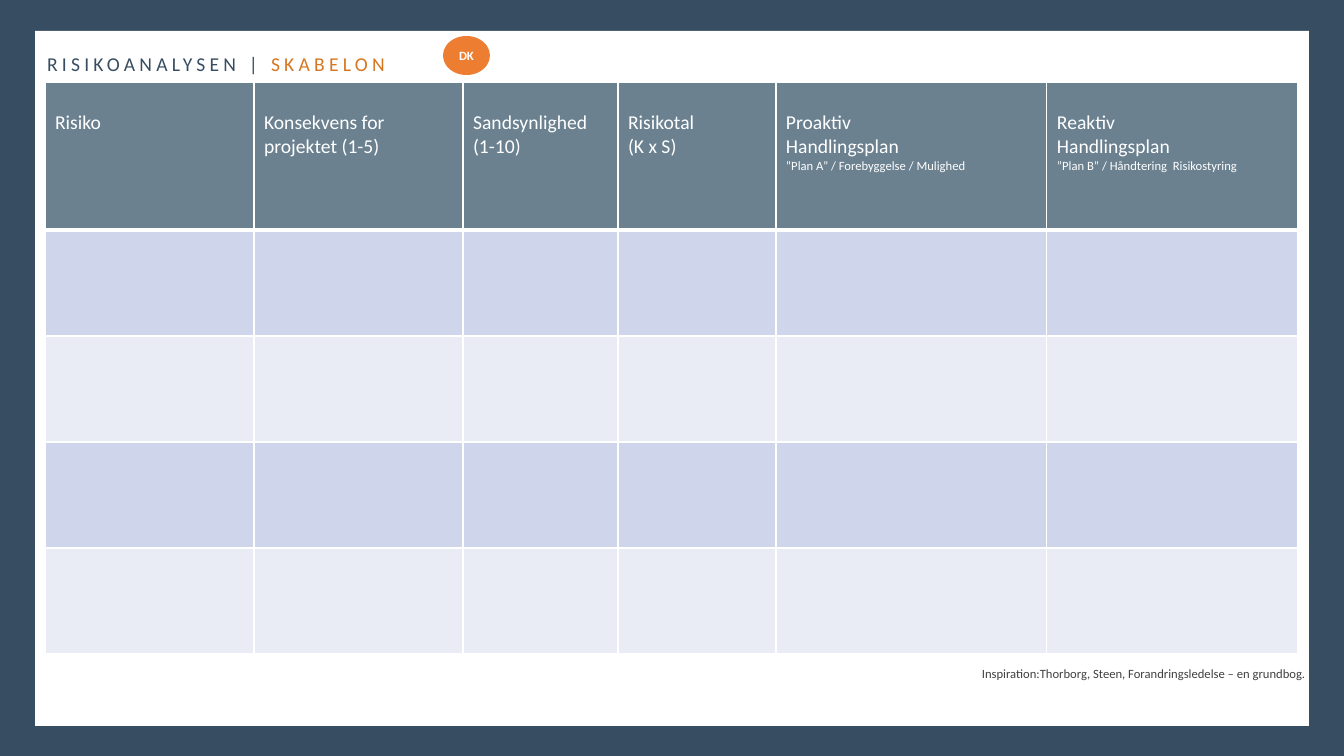
from lxml import etree
from pptx import Presentation
from pptx.dml.color import RGBColor
from pptx.enum.shapes import MSO_SHAPE
from pptx.enum.text import MSO_ANCHOR, MSO_AUTO_SIZE, PP_ALIGN
from pptx.oxml.ns import qn
from pptx.util import Pt

RECT, OVAL = MSO_SHAPE.RECTANGLE, MSO_SHAPE.OVAL
TOP, MIDDLE = MSO_ANCHOR.TOP, MSO_ANCHOR.MIDDLE
LEFT, CENTER = PP_ALIGN.LEFT, PP_ALIGN.CENTER
FIXED = MSO_AUTO_SIZE.NONE

THEME = {
    "font": "Calibri", "text": 14, "small": 9,
    "navy": "374D62", "white": "FFFFFF", "orange": "D77621",
    "badge": "ED7D31", "head": "6B8190", "note": "404040",
    "bands": ["CFD5EA", "E9EBF5"],
}
SCALE = 914400 / 100.8


def px(*sizes):
    return [round(size * SCALE) for size in sizes]


def style(run, size, color, bold=False):
    font = run.font
    font.name, font.size, font.bold = THEME["font"], Pt(THEME[size]), bold
    font.color.rgb = RGBColor.from_string(THEME[color])


deck = Presentation()
deck.slide_width, deck.slide_height = px(1344, 756)
slide = deck.slides.add_slide(deck.slide_layouts[5])
shapes = slide.shapes
slide.background.fill.solid()
slide.background.fill.fore_color.rgb = RGBColor.from_string(THEME["navy"])

panel = shapes.add_shape(RECT, *px(35, 31, 1274, 695))
badge = shapes.add_shape(OVAL, *px(443, 36, 47, 39))
for shape, color in [(panel, "white"), (badge, "badge")]:
    shape.shadow.inherit = False
    shape.fill.solid()
    shape.fill.fore_color.rgb = RGBColor.from_string(THEME[color])
    shape.line.fill.background()
shapes.element.insert(2, panel.element)

title = shapes.title
title.left, title.top, title.width, title.height = px(37, 47, 696, 34)
frame = title.text_frame
frame.auto_size, frame.vertical_anchor = FIXED, TOP
para = frame.paragraphs[0]
para.alignment = LEFT
for words, color in [("RISIKOANALYSEN | ", "navy"), ("SKABELON", "orange")]:
    run = para.add_run()
    run.text = words
    style(run, "text", color)
    run.font._element.set("spc", "300")

heads = [
    ["Risiko"],
    ["Konsekvens for projektet (1-5)"],
    ["Sandsynlighed", "(1-10)"],
    ["Risikotal", "(K x S)"],
    ["Proaktiv", "Handlingsplan", "”Plan A” / Forebyggelse / Mulighed"],
    ["Reaktiv", "Handlingsplan", "”Plan B” / Håndtering  Risikostyring"],
]
widths = [209, 209, 155, 158, 271, 251]
heights = [148] + [106] * 4
table = shapes.add_table(
    len(heights), len(widths), *px(45, 82, sum(widths), sum(heights))).table
for column, width in zip(table.columns, px(*widths)):
    column.width = width
for row, height in zip(table.rows, px(*heights)):
    row.height = height

for level, row in enumerate(table.rows):
    for cell in row.cells:
        props = cell._tc.get_or_add_tcPr()
        for side in ["lnL", "lnR", "lnT", "lnB"]:
            thick = 3 if level == 0 and side == "lnB" else 1
            edge = etree.SubElement(props, qn("a:" + side), w=str(Pt(thick)))
            fill = etree.SubElement(edge, qn("a:solidFill"))
            etree.SubElement(fill, qn("a:srgbClr"), val=THEME["white"])
        color = THEME["bands"][(level - 1) % 2] if level else THEME["head"]
        cell.fill.solid()
        cell.fill.fore_color.rgb = RGBColor.from_string(color)

for cell, lines in zip(table.rows[0].cells, heads):
    cell.margin_top = px(29)[0]
    cell.text_frame.text = "\n".join(lines)
    for spot, para in enumerate(cell.text_frame.paragraphs):
        style(para.runs[0], "small" if spot == 2 else "text", "white")

note = shapes.add_textbox(*px(972, 661, 372, 25))
note.text_frame.word_wrap = True
note.text_frame.text = "Inspiration:Thorborg, Steen, Forandringsledelse – en grundbog."
style(note.text_frame.paragraphs[0].runs[0], "small", "note")

frame = badge.text_frame
frame.margin_left = frame.margin_right = frame.margin_top = frame.margin_bottom = 0
frame.vertical_anchor = MIDDLE
frame.text = "DK"
frame.paragraphs[0].alignment = CENTER
style(frame.paragraphs[0].runs[0], "small", "white", True)

deck.save("out.pptx")
